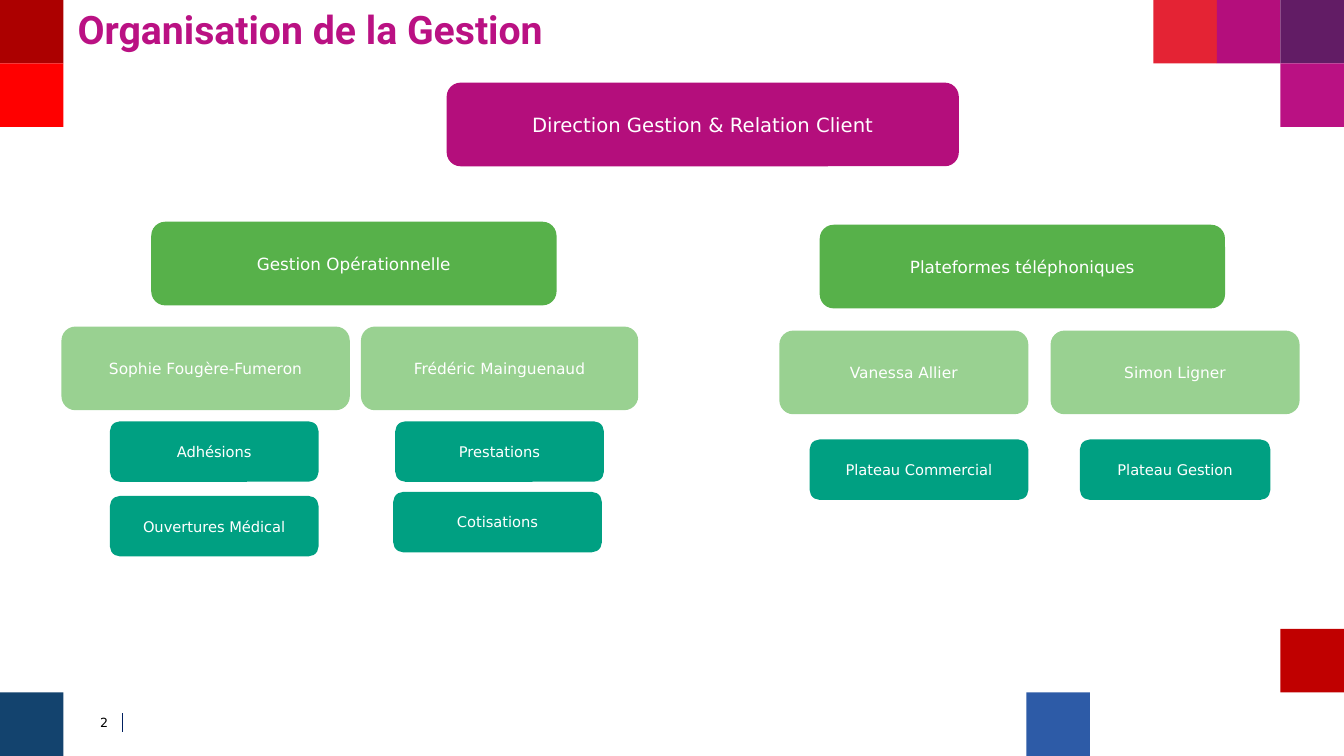
from lxml import etree
from pptx import Presentation
from pptx.dml.color import RGBColor
from pptx.enum.shapes import MSO_CONNECTOR, MSO_SHAPE
from pptx.enum.text import MSO_ANCHOR, PP_ALIGN
from pptx.oxml.ns import qn
from pptx.util import Inches, Pt

WHITE = RGBColor(0xFF, 0xFF, 0xFF)
BLACK = RGBColor(0x00, 0x00, 0x00)
MAGENTA = RGBColor(0xB4, 0x0E, 0x7C)
PINK = RGBColor(0xBA, 0x11, 0x83)
PURPLE = RGBColor(0x62, 0x1C, 0x65)
DARK_RED = RGBColor(0xAC, 0x00, 0x00)
RED = RGBColor(0xFF, 0x00, 0x00)
CORAL = RGBColor(0xE4, 0x23, 0x34)
CRIMSON = RGBColor(0xC0, 0x00, 0x00)
NAVY = RGBColor(0x13, 0x43, 0x6E)
BLUE = RGBColor(0x2D, 0x5B, 0xA7)
LINE_BLUE = RGBColor(0x00, 0x20, 0x60)
GREEN = RGBColor(0x57, 0xB1, 0x4A)
LIGHT_GREEN = RGBColor(0x99, 0xD1, 0x91)
TEAL = RGBColor(0x00, 0xA0, 0x82)

TITLE = "Organisation de la Gestion"
PAGE = "2"
TITLE_FONT, BODY_FONT = "Roboto", "DejaVu Sans"
WIDTH, HEIGHT, SQUARE = 13.33, 7.5, 0.63
RIGHT, BOTTOM = WIDTH - SQUARE, HEIGHT - SQUARE

SQUARES = [
    (0, 0, DARK_RED),
    (0, SQUARE, RED),
    (RIGHT - 2 * SQUARE, 0, CORAL),
    (RIGHT - SQUARE, 0, MAGENTA),
    (RIGHT, 0, PURPLE),
    (RIGHT, SQUARE, PINK),
    (RIGHT, BOTTOM - SQUARE, CRIMSON),
    (0, BOTTOM, NAVY),
    (10.18, BOTTOM, BLUE),
]

# level: fill, text size, box height, then (label, left, top, width)
LEVELS = [
    (MAGENTA, 14, 0.83, [("Direction Gestion & Relation Client", 4.43, 0.82, 5.08)]),
    (GREEN, 12, 0.83, [
        ("Gestion Opérationnelle", 1.5, 2.2, 4.02),
        ("Plateformes téléphoniques", 8.13, 2.23, 4.02),
    ]),
    (LIGHT_GREEN, 11, 0.83, [
        ("Sophie Fougère-Fumeron", 0.61, 3.24, 2.86),
        ("Frédéric Mainguenaud", 3.58, 3.24, 2.75),
        ("Vanessa Allier", 7.73, 3.28, 2.47),
        ("Simon Ligner", 10.42, 3.28, 2.47),
    ]),
    (TEAL, 10.5, 0.6, [
        ("Adhésions", 1.09, 4.18, 2.07),
        ("Ouvertures Médical", 1.09, 4.92, 2.07),
        ("Prestations", 3.92, 4.18, 2.07),
        ("Cotisations", 3.9, 4.88, 2.07),
        ("Plateau Commercial", 8.03, 4.36, 2.17),
        ("Plateau Gestion", 10.71, 4.36, 1.89),
    ]),
]


def add_box(s, kind, left, top, width, height, fill):
    """Add a plain filled shape without outline or shadow."""
    sp = s.shapes.add_shape(kind, Inches(left), Inches(top), Inches(width), Inches(height))
    sp.shadow.inherit = False
    sp.fill.solid()
    sp.fill.fore_color.rgb = fill
    sp.line.fill.background()
    return sp


def write(tf, words, font, size, color, align, bold=False):
    """Write one formatted run in the first paragraph of a text frame."""
    tf.word_wrap = True
    tf.vertical_anchor = MSO_ANCHOR.MIDDLE
    p = tf.paragraphs[0]
    p.alignment = align
    r = p.add_run()
    r.text = words
    r.font.name, r.font.size, r.font.bold = font, Pt(size), bold
    r.font.color.rgb = color


def add_title(s):
    """Place and format the title placeholder."""
    sp = s.shapes.title
    sp.left, sp.top, sp.width, sp.height = map(Inches, (0.73, 0.03, 10.59, 0.58))
    tf = sp.text_frame
    tf.margin_left = tf.margin_right = tf.margin_top = tf.margin_bottom = Inches(0.04)
    write(tf, TITLE, TITLE_FONT, 28, PINK, PP_ALIGN.LEFT, True)
    tf.paragraphs[0].line_spacing = 0.9


def add_page_number(s):
    """Add the page number and the thin rule beside it."""
    rule = s.shapes.add_connector(
        MSO_CONNECTOR.STRAIGHT, Inches(1.22), Inches(7.26), Inches(1.22), Inches(7.07))
    rule.line.color.rgb = LINE_BLUE
    rule.line.width = Pt(0.75)
    etree.SubElement(rule._element.spPr, qn("a:effectLst"))
    sp = s.shapes.add_textbox(Inches(0.64), Inches(7.04), Inches(0.53), Inches(0.25))
    write(sp.text_frame, PAGE, BODY_FONT, 9, BLACK, PP_ALIGN.RIGHT)


def main():
    """Build the organisation chart slide."""
    prs = Presentation()
    prs.slide_width, prs.slide_height = Inches(WIDTH), Inches(HEIGHT)
    s = prs.slides.add_slide(prs.slide_layouts[5])
    for left, top, fill in SQUARES:
        add_box(s, MSO_SHAPE.RECTANGLE, left, top, SQUARE, SQUARE, fill)
    add_page_number(s)
    add_title(s)
    for fill, size, height, boxes in LEVELS:
        for label, left, top, width in boxes:
            sp = add_box(s, MSO_SHAPE.ROUNDED_RECTANGLE, left, top, width, height, fill)
            write(sp.text_frame, label, BODY_FONT, size, WHITE, PP_ALIGN.CENTER)
    prs.save("out.pptx")


if __name__ == "__main__":
    main()
